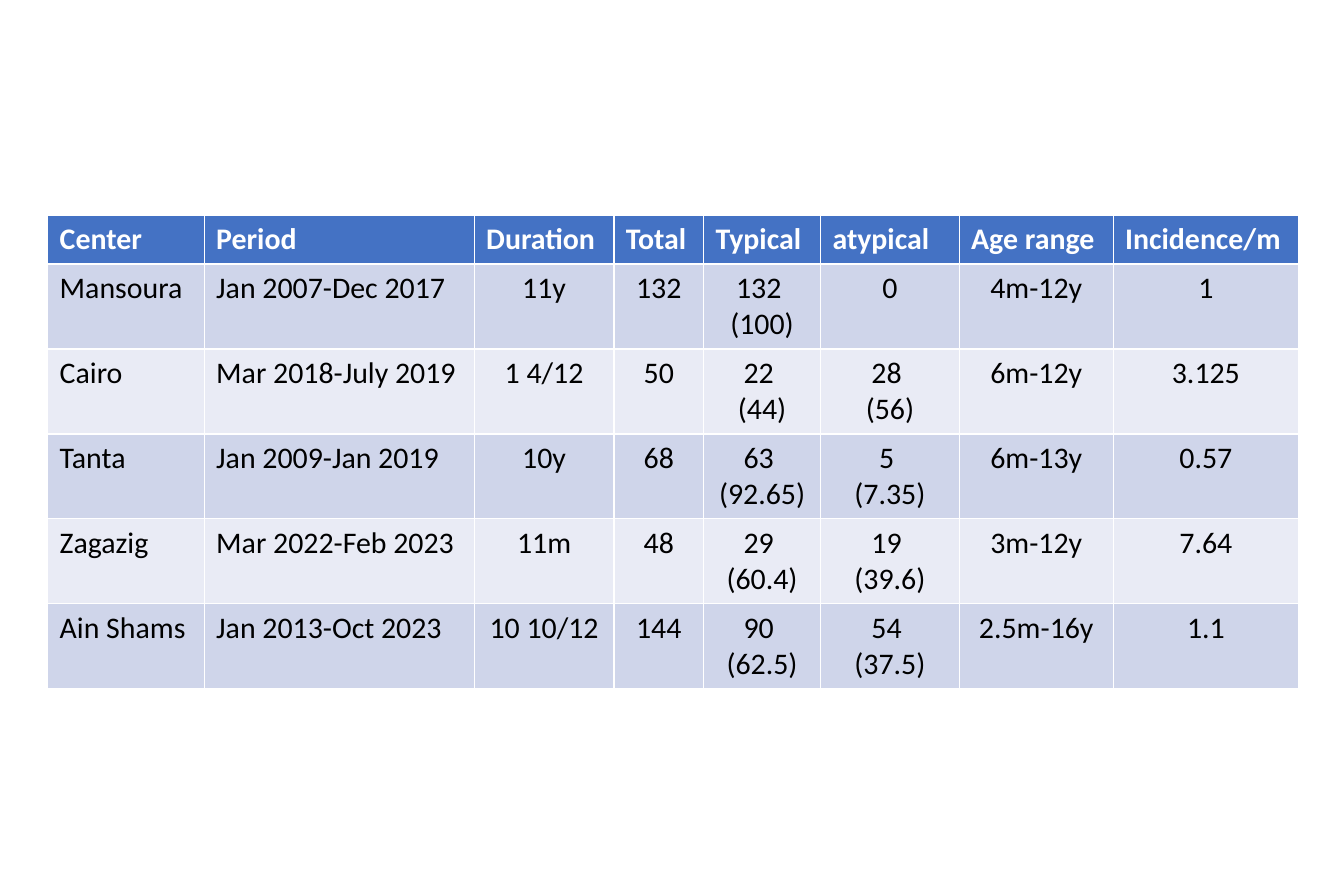
import pptx
import pptx.util
import pptx.dml.color
import pptx.enum.text

Inches = pptx.util.Inches


def rgb(value):
    return pptx.dml.color.RGBColor.from_string(value)


widths = [1.31, 2.26, 1.17, 0.75, 0.98, 1.16, 1.29, 1.55]
heights = [0.41] + [0.7] * 5
rows = [
    ["Center", "Period", "Duration", "Total", "Typical", "atypical", "Age range", "Incidence/m"],
    ["Mansoura", "Jan 2007-Dec 2017", "11y", "132", "132 \n(100)", "0", "4m-12y", "1"],
    ["Cairo", "Mar 2018-July 2019", "1 4/12", "50", "22 \n(44)", "28 \n(56)", "6m-12y", "3.125"],
    ["Tanta", "Jan 2009-Jan 2019", "10y", "68", "63 \n(92.65)", "5 \n(7.35)", "6m-13y", "0.57"],
    ["Zagazig", "Mar 2022-Feb 2023", "11m", "48", "29 \n(60.4)", "19 \n(39.6)", "3m-12y", "7.64"],
    ["Ain Shams", "Jan 2013-Oct 2023", "10 10/12", "144", "90 \n(62.5)", "54 \n(37.5)", "2.5m-16y", "1.1"],
]

prs = pptx.Presentation()
prs.slide_width = Inches(11.25)
prs.slide_height = Inches(7.5)
s = prs.slides.add_slide(prs.slide_layouts[6])

table = s.shapes.add_table(
    len(rows), len(widths), Inches(0.4), Inches(1.8), Inches(sum(widths)), Inches(sum(heights))
).table
for column, width in zip(table.columns, widths):
    column.width = Inches(width)
for row, height in zip(table.rows, heights):
    row.height = Inches(height)

for i, values in enumerate(rows):
    header = i == 0
    fill = "4472C4" if header else ("E9EBF5", "CFD5EA")[i % 2]
    for j, value in enumerate(values):
        cell = table.cell(i, j)
        cell.text = value
        cell.fill.solid()
        cell.fill.fore_color.rgb = rgb(fill)
        for p in cell.text_frame.paragraphs:
            p.font.name = "Calibri"
            p.font.size = pptx.util.Pt(18)
            p.font.bold = header
            p.font.color.rgb = rgb("FFFFFF" if header else "000000")
            if not header and j >= 2:
                p.alignment = pptx.enum.text.PP_ALIGN.CENTER

prs.save("out.pptx")
